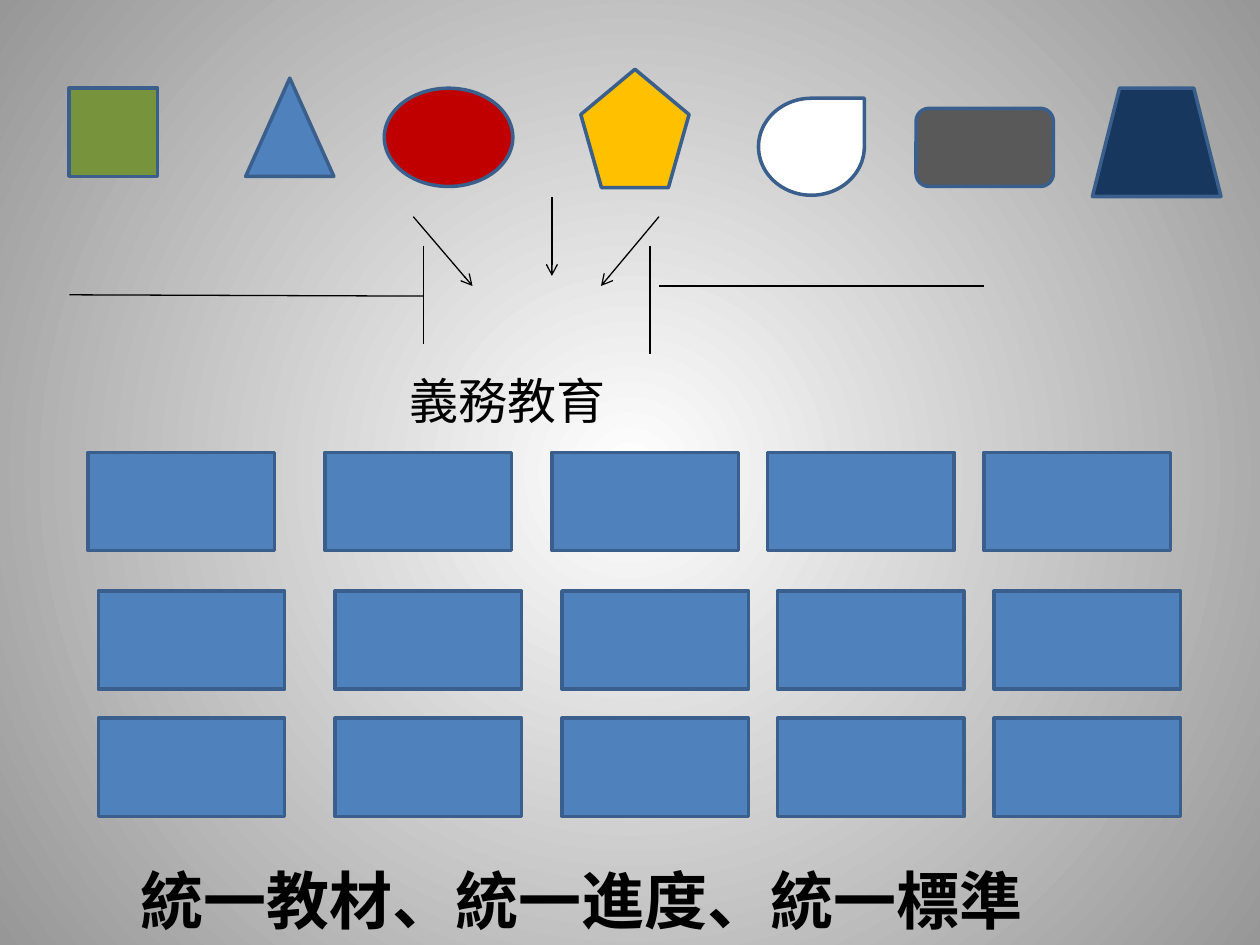
from lxml.etree import SubElement
from pptx import Presentation
from pptx.dml.color import RGBColor
from pptx.enum.shapes import MSO_CONNECTOR, MSO_SHAPE
from pptx.enum.text import MSO_ANCHOR, MSO_AUTO_SIZE, PP_ALIGN
from pptx.oxml.ns import qn
from pptx.util import Inches, Pt

FONT = "Noto Sans CJK SC"
BLACK = RGBColor(0x00, 0x00, 0x00)
WHITE = RGBColor(0xFF, 0xFF, 0xFF)
BACK_GRAY = RGBColor(0x97, 0x97, 0x97)
BLUE = RGBColor(0x4F, 0x81, 0xBD)
OUTLINE = RGBColor(0x3A, 0x5F, 0x8C)
GOLD = RGBColor(0xFF, 0xC0, 0x00)
RED = RGBColor(0xC0, 0x00, 0x00)
DARK_GRAY = RGBColor(0x59, 0x59, 0x59)
GREEN = RGBColor(0x77, 0x93, 0x3C)
NAVY = RGBColor(0x17, 0x37, 0x5E)

WALLS = [
    (3.36, 1.95, 3.36, 2.73),
    (5.16, 1.95, 5.16, 2.81),
    (0.55, 2.34, 3.36, 2.35),
    (5.23, 2.27, 7.81, 2.27),
]
ARROWS = [
    (4.38, 1.56, 4.38, 2.19),
    (5.23, 1.72, 4.77, 2.27),
    (3.28, 1.72, 3.75, 2.27),
]
LEARNERS = [
    (MSO_SHAPE.RECTANGLE, 0.55, 0.7, 0.7, 0.7, GREEN),
    (MSO_SHAPE.ISOSCELES_TRIANGLE, 1.95, 0.62, 0.7, 0.78, BLUE),
    (MSO_SHAPE.OVAL, 3.05, 0.7, 1.02, 0.78, RED),
    (MSO_SHAPE.REGULAR_PENTAGON, 4.61, 0.55, 0.86, 0.94, GOLD),
    (MSO_SHAPE.TEAR, 6.02, 0.78, 0.84, 0.77, WHITE),
    (MSO_SHAPE.ROUNDED_RECTANGLE, 7.27, 0.86, 1.09, 0.62, DARK_GRAY),
    (MSO_SHAPE.TRAPEZOID, 8.67, 0.7, 1.02, 0.86, NAVY),
]
BOX_LEFTS = [0.7, 2.58, 4.38, 6.09, 7.81]
BOX_ROWS = [(3.59, 0), (4.69, 0.08), (5.7, 0.08)]


def set_background(s):
    """Fill the slide with a gradient that spreads from its centre."""
    fill = s.background.fill
    fill.gradient()
    for stop, color, position in zip(fill.gradient_stops, (WHITE, BACK_GRAY), (0, 1)):
        stop.color.rgb = color
        stop.position = position
    grad = s.element.find(".//" + qn("a:gradFill"))
    grad.remove(grad.find(qn("a:lin")))
    circle = SubElement(grad, qn("a:path"), path="circle")
    SubElement(circle, qn("a:fillToRect"), l="50000", t="50000", r="50000", b="50000")


def add_line(s, x1, y1, x2, y2, arrow=False):
    """Add a thin black line, with an arrowhead at its end if asked."""
    line = s.shapes.add_connector(
        MSO_CONNECTOR.STRAIGHT, Inches(x1), Inches(y1), Inches(x2), Inches(y2)
    )
    line.line.color.rgb = BLACK
    line.line.width = Pt(0.75)
    if arrow:
        SubElement(line.line._get_or_add_ln(), qn("a:tailEnd"), type="arrow")
    SubElement(line._element.spPr, qn("a:effectLst"))


def add_figure(s, kind, x, y, w, h, color):
    """Add an outlined preset shape."""
    sp = s.shapes.add_shape(kind, Inches(x), Inches(y), Inches(w), Inches(h))
    sp.shadow.inherit = False
    sp.fill.solid()
    sp.fill.fore_color.rgb = color
    sp.line.color.rgb = OUTLINE
    sp.line.width = Pt(2)
    sp.text_frame.vertical_anchor = MSO_ANCHOR.MIDDLE


def add_caption(s, text, x, y, w, h, size, align=PP_ALIGN.LEFT, bold=False):
    """Add a one-line caption in black."""
    tf = s.shapes.add_textbox(Inches(x), Inches(y), Inches(w), Inches(h)).text_frame
    tf.word_wrap = True
    tf.auto_size = MSO_AUTO_SIZE.SHAPE_TO_FIT_TEXT
    p = tf.paragraphs[0]
    p.text = text
    p.alignment = align
    font = p.font
    font.name = FONT
    font.size = Pt(size)
    font.bold = bold
    font.color.rgb = BLACK
    SubElement(font._element, qn("a:ea"), typeface=FONT)


def main():
    """Build the slide and save it."""
    prs = Presentation()
    prs.slide_width, prs.slide_height = Inches(10), Inches(7.5)
    s = prs.slides.add_slide(prs.slide_layouts[6])
    set_background(s)
    for wall in WALLS:
        add_line(s, *wall)
    add_caption(s, "義務教育", 2.97, 2.89, 2.11, 0.57, 28, PP_ALIGN.CENTER)
    for learner in LEARNERS:
        add_figure(s, *learner)
    for arrow in ARROWS:
        add_line(s, *arrow, arrow=True)
    for top, shift in BOX_ROWS:
        for left in BOX_LEFTS:
            add_figure(s, MSO_SHAPE.RECTANGLE, left + shift, top, 1.48, 0.78, BLUE)
    add_caption(s, "統一教材、統一進度、統一標準", 1.02, 6.79, 7.58, 0.71, 36, bold=True)
    prs.save("out.pptx")


if __name__ == "__main__":
    main()
